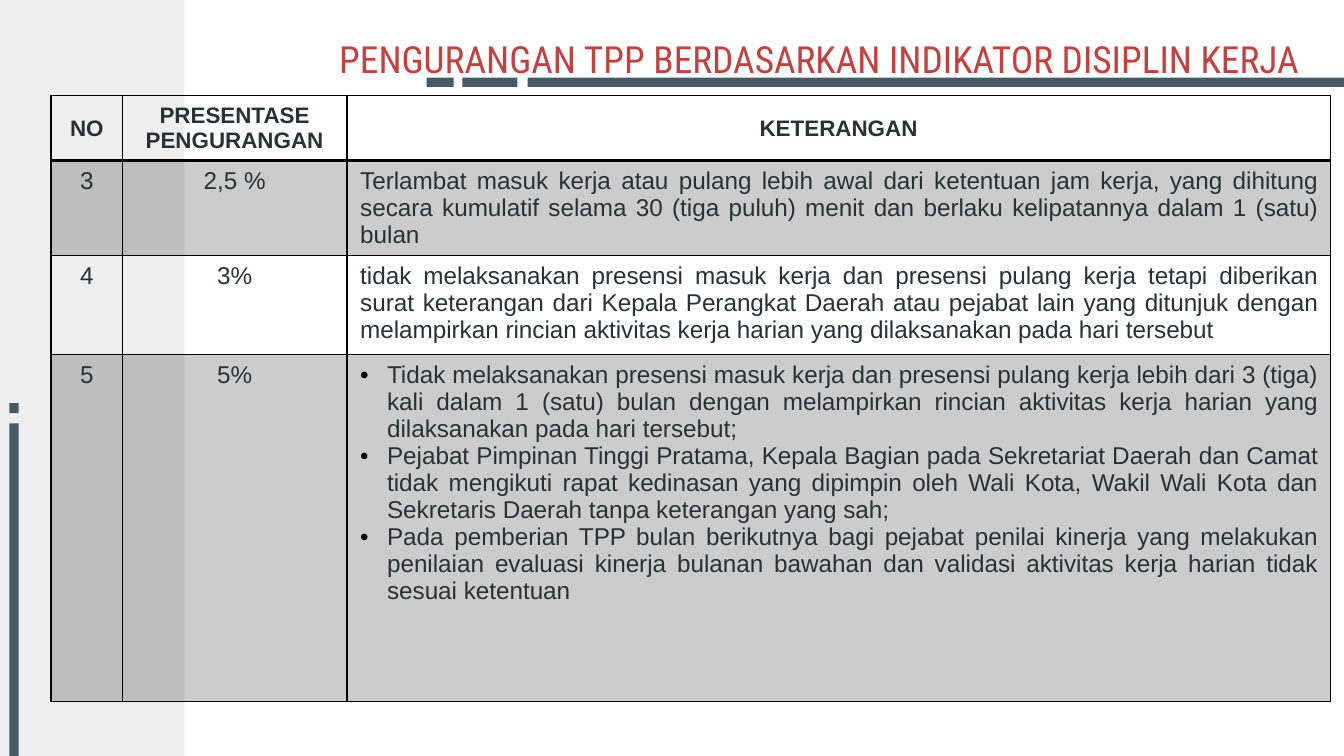
from dataclasses import dataclass

from pptx import Presentation
from pptx import util as u
from pptx.dml import color
from pptx.enum import shapes, text
from pptx.oxml import ns
from lxml import etree

SLATE, INK, BLACK, RED, PALE = "455A64", "263238", "000000", "C53F3F", "EEEEEE"
CENTER, JUSTIFY = text.PP_ALIGN.CENTER, text.PP_ALIGN.JUSTIFY


@dataclass
class Bar:
    left: float
    top: float
    width: float
    height: float
    fill: str = SLATE


@dataclass
class Rule:
    number: str
    cut: str
    notes: list[str]
    height: float
    shaded: bool = False


BARS = [
    Bar(-15, -6, 113.8, 416, PALE),
    # Broken line under the title
    Bar(282.6, 41.6, 447.8, 5),
    Bar(247.7, 41.6, 29.5, 5),
    Bar(228.6, 41.6, 14.4, 5),
    # Broken line on the left edge
    Bar(5, 226.8, 5, 398),
    Bar(5, 216, 5, 5.4),
]

HEADINGS = [["NO"], ["PRESENTASE", "PENGURANGAN"], ["KETERANGAN"]]
HEADING_HEIGHT = 35
COLUMN_WIDTHS = [38.2, 120.2, 527]
RULES = [
    Rule("3", "2,5 %", [
        "Terlambat masuk kerja atau pulang lebih awal dari ketentuan jam kerja, yang dihitung "
        "secara kumulatif selama 30 (tiga puluh) menit dan berlaku kelipatannya dalam 1 (satu) "
        "bulan"], 37.5, shaded=True),
    Rule("4", "3%", [
        "tidak melaksanakan presensi masuk kerja dan presensi pulang kerja tetapi diberikan "
        "surat keterangan dari Kepala Perangkat Daerah atau pejabat lain yang ditunjuk dengan "
        "melampirkan rincian aktivitas kerja harian yang dilaksanakan pada hari tersebut"], 53),
    Rule("5", "5%", [
        "Tidak melaksanakan presensi masuk kerja dan presensi pulang kerja lebih dari 3 (tiga) "
        "kali dalam 1 (satu) bulan dengan melampirkan rincian aktivitas kerja harian yang "
        "dilaksanakan pada hari tersebut;",
        "Pejabat Pimpinan Tinggi Pratama, Kepala Bagian pada Sekretariat Daerah dan Camat "
        "tidak mengikuti rapat kedinasan yang dipimpin oleh Wali Kota, Wakil Wali Kota dan "
        "Sekretaris Daerah tanpa keterangan yang sah;",
        "Pada pemberian TPP bulan berikutnya bagi pejabat penilai kinerja yang melakukan "
        "penilaian evaluasi kinerja bulanan bawahan dan validasi aktivitas kerja harian tidak "
        "sesuai ketentuan"], 186, shaded=True),
]


def rgb(value: str) -> color.RGBColor:
    return color.RGBColor.from_string(value)


def add_xml(parent, tag: str, **attributes: str):
    return etree.SubElement(parent, ns.qn(tag), attributes)


def add_run(paragraph, words: str, font: str, size: float, ink: str, bold: bool = False) -> None:
    run = paragraph.add_run()
    run.text = words
    run.font.name = font
    run.font.size = u.Pt(size)
    run.font.bold = bold
    run.font.color.rgb = rgb(ink)


def draw_bar(slide, bar: Bar) -> None:
    shape = slide.shapes.add_shape(
        shapes.MSO_SHAPE.RECTANGLE,
        u.Pt(bar.left), u.Pt(bar.top), u.Pt(bar.width), u.Pt(bar.height))
    shape.shadow.inherit = False
    shape.fill.solid()
    shape.fill.fore_color.rgb = rgb(bar.fill)
    shape.line.fill.background()


def add_bullet(paragraph) -> None:
    indent = u.Pt(14.4)
    properties = paragraph._p.get_or_add_pPr()
    properties.set("marL", str(indent))
    properties.set("indent", str(-indent))
    add_xml(add_xml(properties, "a:buClr"), "a:srgbClr", val=BLACK)
    add_xml(properties, "a:buFont", typeface="Arial")
    add_xml(properties, "a:buChar", char="•")


def style_cell(cell, shaded: bool, top: float, bottom: float) -> None:
    properties = cell._tc.get_or_add_tcPr()
    for side, width in (("L", 1), ("R", 1), ("T", top), ("B", bottom)):
        border = add_xml(properties, f"a:ln{side}", w=str(u.Pt(width)))
        add_xml(add_xml(border, "a:solidFill"), "a:srgbClr", val=BLACK)
    if shaded:
        cell.fill.solid()
        cell.fill.fore_color.rgb = rgb(BLACK)
        tint = properties.find(ns.qn("a:solidFill")).find(ns.qn("a:srgbClr"))
        add_xml(tint, "a:alpha", val="20000")
    else:
        cell.fill.background()


def write_cell(cell, lines: list[str], align, size: float,
               bold: bool = False, bullets: bool = False) -> None:
    frame = cell.text_frame
    for index, line in enumerate(lines):
        paragraph = frame.add_paragraph() if index else frame.paragraphs[0]
        paragraph.alignment = align
        if bullets:
            add_bullet(paragraph)
        add_run(paragraph, line, "Arial", size, INK, bold)


def draw_title(slide) -> None:
    title = slide.shapes.title
    title.left, title.top, title.width, title.height = map(u.Pt, (162.7, 0, 540.7, 50.4))
    frame = title.text_frame
    frame.auto_size = text.MSO_AUTO_SIZE.NONE
    frame.word_wrap = True
    frame.vertical_anchor = text.MSO_ANCHOR.BOTTOM
    frame.margin_left = frame.margin_right = u.Pt(7.2)
    frame.margin_top = frame.margin_bottom = u.Pt(7.2)
    paragraph = frame.paragraphs[0]
    paragraph.alignment = text.PP_ALIGN.RIGHT
    paragraph.line_spacing = 1.5
    add_run(paragraph, "PENGURANGAN TPP BERDASARKAN INDIKATOR DISIPLIN KERJA",
            "Roboto Condensed", 20, RED)


def draw_table(slide) -> None:
    heights = [HEADING_HEIGHT] + [rule.height for rule in RULES]
    table = slide.shapes.add_table(
        len(heights), len(COLUMN_WIDTHS), u.Pt(27.4), u.Pt(51.2),
        u.Pt(sum(COLUMN_WIDTHS)), u.Pt(sum(heights))).table
    table.first_row = table.horz_banding = False
    for column, width in zip(table.columns, COLUMN_WIDTHS):
        column.width = u.Pt(width)
    for row, height in zip(table.rows, heights):
        row.height = u.Pt(height)

    # Heading row, closed by a heavier line
    for index, lines in enumerate(HEADINGS):
        cell = table.cell(0, index)
        cell.vertical_anchor = text.MSO_ANCHOR.MIDDLE
        style_cell(cell, False, 1, 2)
        write_cell(cell, lines, CENTER, 12, bold=True)

    # One row per rule
    for index, rule in enumerate(RULES, start=1):
        number, cut, notes = table.rows[index].cells
        for cell in (number, cut, notes):
            style_cell(cell, rule.shaded, 2 if index == 1 else 1, 1)
        write_cell(number, [rule.number], CENTER, 13)
        write_cell(cut, [rule.cut], CENTER, 13)
        write_cell(notes, rule.notes, JUSTIFY, 13, bullets=len(rule.notes) > 1)


def main() -> None:
    deck = Presentation()
    deck.slide_width, deck.slide_height = u.Pt(720), u.Pt(405)
    slide = deck.slides.add_slide(deck.slide_layouts[5])
    for bar in BARS:
        draw_bar(slide, bar)
    draw_title(slide)
    draw_table(slide)
    deck.save("out.pptx")


if __name__ == "__main__":
    main()
